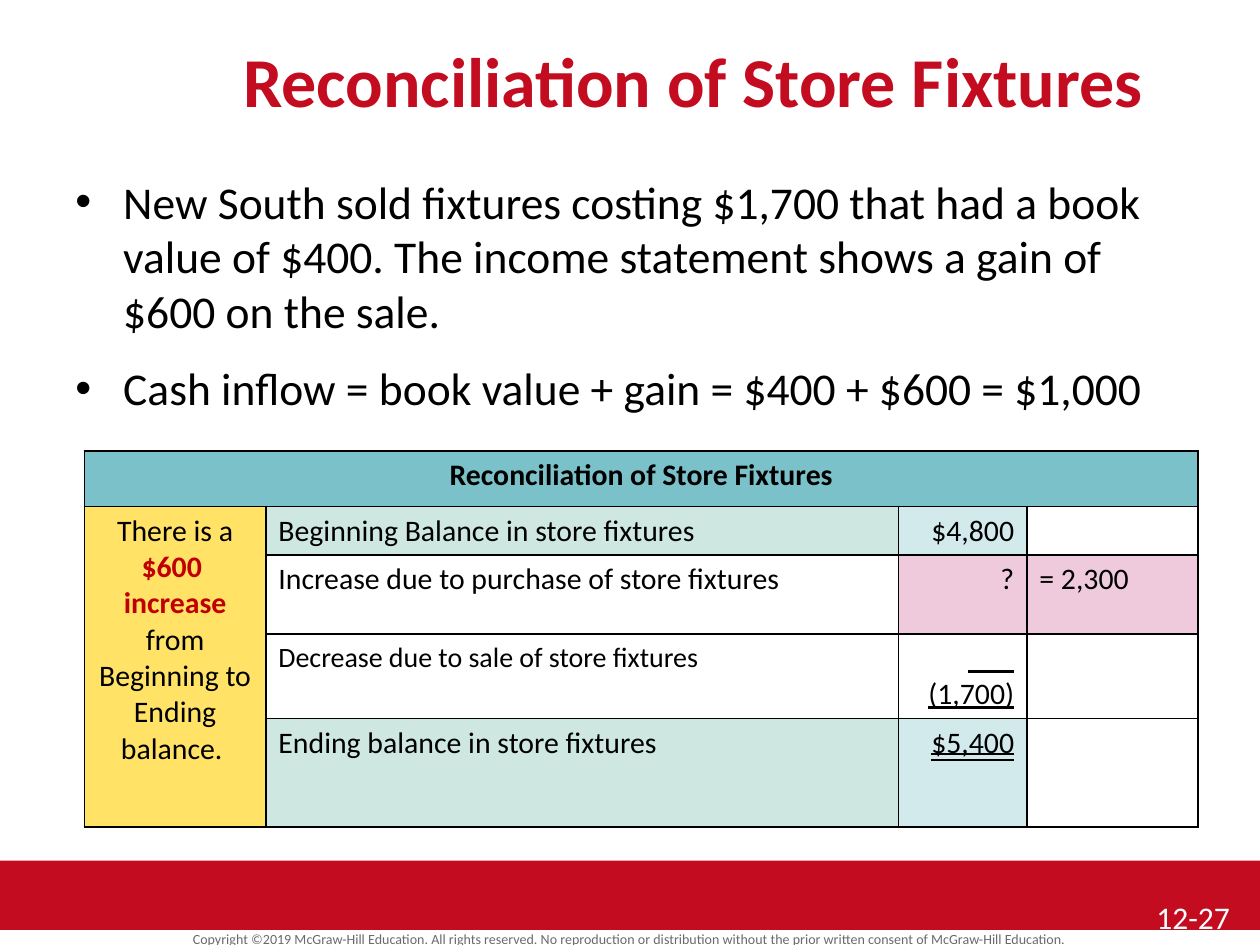
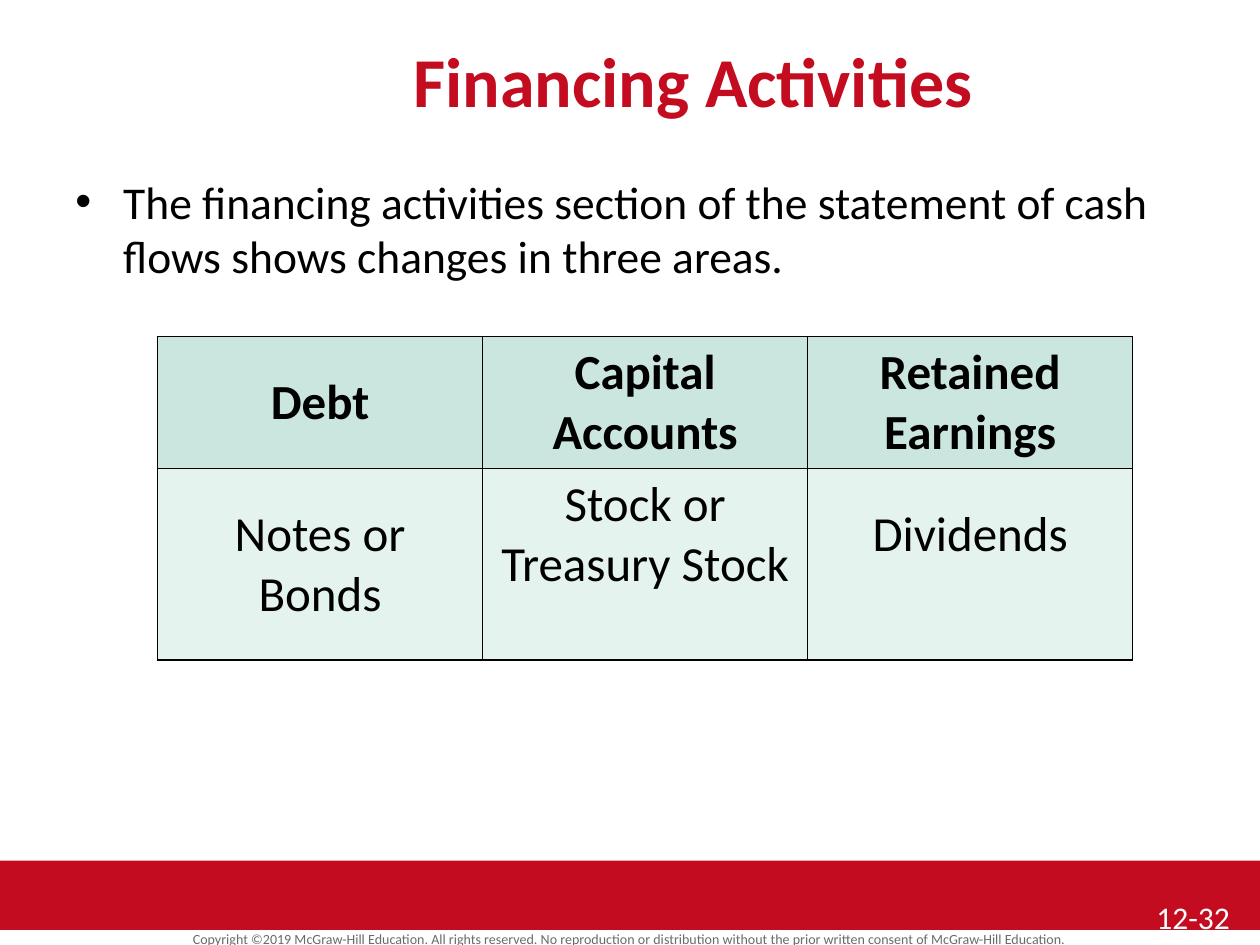
"""Build two accounting slides: a fixtures reconciliation and financing activities."""
from dataclasses import dataclass

from lxml import etree
from pptx import Presentation
from pptx import util as u
from pptx.dml.color import RGBColor
from pptx.enum import shapes, text
from pptx.oxml.ns import qn


@dataclass(frozen=True)
class Theme:
    font: str = "Calibri"
    red: str = "C30C20"
    accent: str = "C00000"
    grey: str = "6A6A6A"
    black: str = "000000"
    white: str = "FFFFFF"
    teal: str = "7AC1CA"
    yellow: str = "FFE266"
    mint: str = "CEE8E1"
    sky: str = "D3EAED"
    pink: str = "EFCADD"
    head: str = "CAE6DE"
    pale: str = "E4F3EE"
    title_size: int = 40
    body_size: int = 26
    number_size: int = 18
    notice_size: int = 8
    ledger_size: int = 17
    small_size: int = 16
    areas_size: int = 28


THEME = Theme()
WIDTH, HEIGHT = 10, 7.5
LEFT, CENTER, RIGHT = text.PP_ALIGN.LEFT, text.PP_ALIGN.CENTER, text.PP_ALIGN.RIGHT
TOP, MIDDLE, BOTTOM = text.MSO_ANCHOR.TOP, text.MSO_ANCHOR.MIDDLE, text.MSO_ANCHOR.BOTTOM

NOTICE = ("Copyright ©2019 McGraw-Hill Education. All rights reserved. No reproduction or "
          "distribution without the prior written consent of McGraw-Hill Education.")

FIXTURES = {
    "title": "Reconciliation of Store Fixtures",
    "number": "12-27",
    "bullets": [
        "New South sold fixtures costing $1,700 that had a book value of $400. "
        "The income statement shows a gain of $600 on the sale.",
        "Cash inflow = book value + gain = $400 + $600 = $1,000",
    ],
    "origin": (0.67, 3.58),
    "columns": [1.44, 5.02, 1.02, 1.36],
    "rows": [0.44, 0.38, 0.63, 0.67, 0.86],
}
LEDGER_TITLE = "Reconciliation of Store Fixtures"
CHANGE = [
    [("There is a ", False), ("$600 ", True)],
    [("increase ", True), ("from Beginning to Ending balance. ", False)],
]
LEDGER = [
    ("Beginning Balance in store fixtures", "$4,800", ""),
    ("Increase due to purchase of store fixtures", "?", "= 2,300"),
    ("Decrease due to sale of store fixtures", "(1,700)", ""),
    ("Ending balance in store fixtures", "$5,400", ""),
]
BALANCE = (THEME.mint, THEME.sky, None)
LEDGER_FILLS = [BALANCE, (None, THEME.pink, THEME.pink), (None, None, None), BALANCE]
SALE_ROW, ENDING_ROW = 3, 4

FINANCING = {
    "title": "Financing Activities",
    "number": "12-32",
    "bullets": ["The financing activities section of the statement of cash flows "
                "shows changes in three areas."],
    "origin": (1.25, 2.67),
    "columns": [2.58] * 3,
    "rows": [1.05, 1.52],
}
AREAS = [("Debt", "Notes or Bonds"),
         ("Capital Accounts", "Stock or Treasury Stock"),
         ("Retained Earnings", "Dividends")]
RAISED_AREAS = {1, 2}
RAISE = 0.52


def color(value):
    return RGBColor.from_string(value)


def style(font, size, fill=THEME.black, bold=False):
    font.name, font.size, font.bold = THEME.font, u.Pt(size), bold
    font.color.rgb = color(fill)


def add_label(page, place, words, size, fill, align=LEFT):
    box = page.shapes.add_textbox(*map(u.Inches, place))
    box.text_frame.word_wrap = True
    para = box.text_frame.paragraphs[0]
    para.text, para.alignment = words, align
    style(para.font, size, fill)
    return para


def add_bullets(page, lines):
    box = page.shapes.add_textbox(*map(u.Inches, (0.5, 1.33, 9, 5.17)))
    frame = box.text_frame
    frame.word_wrap = True
    for index, line in enumerate(lines):
        para = frame.add_paragraph() if index else frame.paragraphs[0]
        para.text = line
        para.space_after = u.Pt(8)
        if index:
            para.space_before = u.Pt(0.2 * THEME.body_size)
        props = para._p.get_or_add_pPr()
        props.set("marL", str(u.Inches(0.38)))
        props.set("indent", str(-u.Inches(0.38)))
        etree.SubElement(props, qn("a:buFont"), typeface="Arial")
        etree.SubElement(props, qn("a:buChar"), char="•")
        style(para.font, THEME.body_size)


def add_page(deck, content):
    page = deck.slides.add_slide(deck.slide_layouts[5])
    band = page.shapes.add_shape(shapes.MSO_SHAPE.RECTANGLE,
                                 *map(u.Inches, (0, 6.83, WIDTH, 0.55)))
    band.shadow.inherit = False
    band.fill.solid()
    band.fill.fore_color.rgb = color(THEME.red)
    band.line.fill.background()
    notice = add_label(page, (0, 7.36, WIDTH, 0.19), NOTICE,
                       THEME.notice_size, THEME.grey, CENTER)
    notice.line_spacing = 0.8
    title = page.shapes.title
    title.left, title.top, title.width, title.height = map(u.Inches, (1, 0.25, 9, 0.67))
    frame = title.text_frame
    frame.text = content["title"]
    frame.vertical_anchor = TOP
    frame.auto_size = text.MSO_AUTO_SIZE.NONE
    frame.paragraphs[0].alignment = CENTER
    style(frame.paragraphs[0].font, THEME.title_size, THEME.red, True)
    add_bullets(page, content["bullets"])
    add_label(page, (9.08, 7.08, 0.92, 0.42), content["number"],
              THEME.number_size, THEME.white)
    return page


def add_borders(cell):
    props = cell._tc.get_or_add_tcPr()
    for side in ("lnL", "lnR", "lnT", "lnB"):
        line = etree.SubElement(props, qn(f"a:{side}"), w=str(u.Pt(1)))
        paint = etree.SubElement(line, qn("a:solidFill"))
        etree.SubElement(paint, qn("a:srgbClr"), val=THEME.black)


def add_grid(page, content):
    columns, rows = content["columns"], content["rows"]
    place = (*content["origin"], sum(columns), sum(rows))
    grid = page.shapes.add_table(len(rows), len(columns), *map(u.Inches, place)).table
    grid.first_row = grid.horz_banding = False
    for column, width in zip(grid.columns, columns):
        column.width = u.Inches(width)
    for row, height in zip(grid.rows, rows):
        row.height = u.Inches(height)
    for cell in grid.iter_cells():
        add_borders(cell)
        cell.fill.background()
    return grid


def paint_cell(cell, fill):
    if fill:
        cell.fill.solid()
        cell.fill.fore_color.rgb = color(fill)


def fill_cell(cell, words, fill, size, align=CENTER, bold=False, anchor=TOP):
    para = cell.text_frame.paragraphs[0]
    para.text, para.alignment = words, align
    style(para.font, size, bold=bold)
    cell.vertical_anchor = anchor
    paint_cell(cell, fill)
    return para


def fill_change(cell):
    paint_cell(cell, THEME.yellow)
    frame = cell.text_frame
    for index, parts in enumerate(CHANGE):
        para = frame.add_paragraph() if index else frame.paragraphs[0]
        para.alignment = CENTER
        for words, strong in parts:
            span = para.add_run()
            span.text = words
            style(span.font, THEME.ledger_size,
                  THEME.accent if strong else THEME.black, strong)


def add_sum_rule(page):
    right = FIXTURES["origin"][0] + sum(FIXTURES["columns"][:3]) - 0.1
    level = FIXTURES["origin"][1] + sum(FIXTURES["rows"][:SALE_ROW]) + 0.3
    rule = page.shapes.add_connector(shapes.MSO_CONNECTOR.STRAIGHT,
                                     *map(u.Inches, (right - 0.37, level, right, level)))
    rule.line.color.rgb = color(THEME.black)
    rule.line.width = u.Pt(1.5)
    etree.SubElement(rule._element.spPr, qn("a:effectLst"))


def build_fixtures(deck):
    page = add_page(deck, FIXTURES)
    grid = add_grid(page, FIXTURES)
    grid.cell(0, 0).merge(grid.cell(0, 3))
    grid.cell(1, 0).merge(grid.cell(ENDING_ROW, 0))
    fill_cell(grid.cell(0, 0), LEDGER_TITLE, THEME.teal, THEME.ledger_size, bold=True)
    fill_change(grid.cell(1, 0))
    for row, (entries, fills) in enumerate(zip(LEDGER, LEDGER_FILLS), 1):
        for column, (words, fill, align) in enumerate(
                zip(entries, fills, (LEFT, RIGHT, LEFT)), 1):
            small = (row, column) == (SALE_ROW, 1)
            size = THEME.small_size if small else THEME.ledger_size
            fill_cell(grid.cell(row, column), words, fill, size, align)
    sale, ending = (grid.cell(row, 2) for row in (SALE_ROW, ENDING_ROW))
    sale.vertical_anchor = BOTTOM
    sale.text_frame.paragraphs[0].font.underline = True
    ending.text_frame.paragraphs[0].font.underline = text.MSO_UNDERLINE.DOUBLE_LINE
    add_sum_rule(page)


def build_financing(deck):
    grid = add_grid(add_page(deck, FINANCING), FINANCING)
    for column, (area, example) in enumerate(AREAS):
        fill_cell(grid.cell(0, column), area, THEME.head, THEME.areas_size,
                  bold=True, anchor=MIDDLE)
        cell = grid.cell(1, column)
        fill_cell(cell, example, THEME.pale, THEME.areas_size, anchor=MIDDLE)
        if column in RAISED_AREAS:
            cell.margin_bottom = u.Inches(RAISE)


def main():
    deck = Presentation()
    deck.slide_width, deck.slide_height = u.Inches(WIDTH), u.Inches(HEIGHT)
    build_fixtures(deck)
    build_financing(deck)
    deck.save("out.pptx")


if __name__ == "__main__":
    main()
